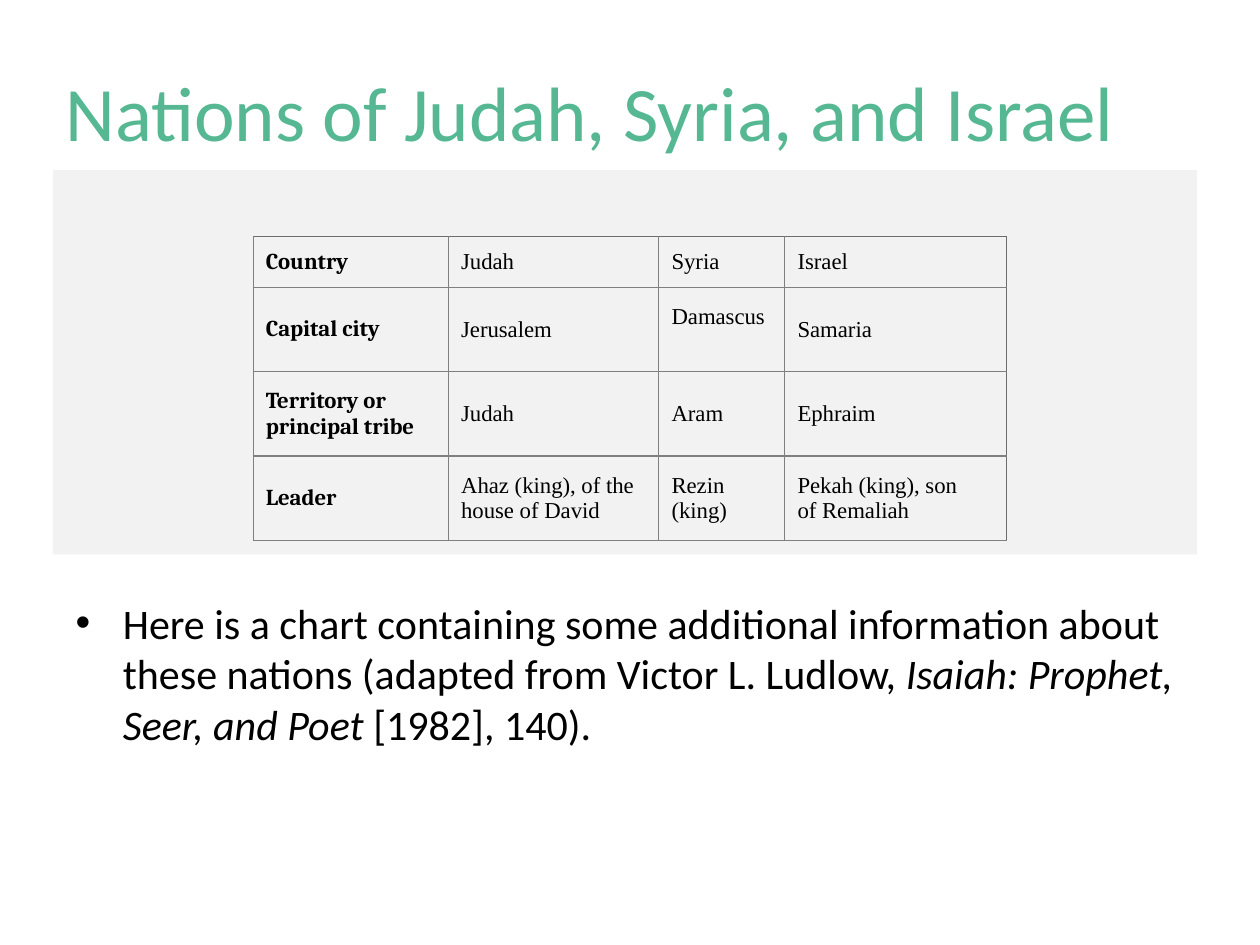
from lxml.etree import SubElement
from pptx import Presentation
from pptx.dml.color import RGBColor
from pptx.enum.shapes import MSO_SHAPE as Shape
from pptx.enum.text import MSO_ANCHOR as Anchor, MSO_AUTO_SIZE as AutoSize, PP_ALIGN as Align
from pptx.oxml.ns import qn
from pptx.util import Pt

GREEN = RGBColor(0x55, 0xB8, 0x93)
BLACK = RGBColor(0x00, 0x00, 0x00)
PANEL_GRAY = RGBColor(0xF2, 0xF2, 0xF2)
BORDER_GRAY = RGBColor(0x80, 0x80, 0x80)
EDGE_GRAY = RGBColor(0x6D, 0x6D, 0x6D)

HARD_SPACE = chr(160)
TITLE_FONT = {"name": "Calibri", "size": Pt(44)}
BODY_FONT = {"name": "Calibri", "size": Pt(24)}
HEADING_FONT = {"name": "Cambria", "size": Pt(13), "bold": True}
CELL_FONT = {"name": "Times New Roman", "size": Pt(13), "bold": False}

COLUMN_WIDTHS = [111.6, 120.24, 72, 126.72]
ROW_HEIGHTS = [28.8, 48.24, 48.24, 48.24]
NATIONS = [
    ["Country", "Judah", "Syria", "Israel"],
    ["Capital city", "Jerusalem", "Damascus", "Samaria"],
    ["Territory or principal tribe", "Judah", "Aram", "Ephraim"],
    ["Leader", "Ahaz (king), of the house of David", "Rezin\n(king)",
     f"Pekah{HARD_SPACE}(king), son of{HARD_SPACE}Remaliah"],
]
CITATION = [
    ("Here is a chart containing some additional information about these nations "
     f"(adapted from Victor L. Ludlow,{HARD_SPACE}", False),
    (f"Isaiah: Prophet, Seer, and Poet{HARD_SPACE}", True),
    ("[1982], 140).", False),
]


def format_font(font, values, color):
    for name, value in values.items():
        setattr(font, name, value)
    font.color.rgb = color


def place(shape, left, top, width, height):
    box = {"left": left, "top": top, "width": width, "height": height}
    for name, value in box.items():
        setattr(shape, name, Pt(value))


def add_panel(slide, left, top, width, height):
    panel = slide.shapes.add_shape(
        Shape.RECTANGLE, Pt(left), Pt(top), Pt(width), Pt(height))
    panel.shadow.inherit = False
    panel.fill.solid()
    panel.fill.fore_color.rgb = PANEL_GRAY
    panel.line.fill.background()
    # Send the panel behind the placeholders
    slide.shapes._spTree.insert(2, panel._element)


def fill_title(title, text):
    place(title, 30.24, 29.52, 653.76, 67.68)
    frame = title.text_frame
    frame.text = text
    frame.auto_size = AutoSize.NONE
    frame.vertical_anchor = Anchor.MIDDLE
    paragraph = frame.paragraphs[0]
    paragraph.alignment = Align.LEFT
    format_font(paragraph.runs[0].font, TITLE_FONT, GREEN)


def fill_body(body, runs):
    place(body, 36, 337.68, 648, 156.24)
    frame = body.text_frame
    frame.auto_size = AutoSize.NONE
    paragraph = frame.paragraphs[0]
    properties = paragraph._p.get_or_add_pPr()
    properties.set("marL", str(Pt(27)))
    properties.set("indent", str(Pt(-27)))
    SubElement(properties, qn("a:buChar"), char="•")
    paragraph.space_before = Pt(0)
    for text, italic in runs:
        run = paragraph.add_run()
        run.text = text
        format_font(run.font, {**BODY_FONT, "italic": italic}, BLACK)


def set_borders(cell, colors):
    properties = cell._tc.get_or_add_tcPr()
    for index, (side, color) in enumerate(colors.items()):
        line = properties.makeelement(qn(f"a:{side}"), {"w": str(Pt(0.75))})
        fill = SubElement(line, qn("a:solidFill"))
        SubElement(fill, qn("a:srgbClr"), val=str(color))
        properties.insert(index, line)


def fill_cell(cell, text, font_values):
    cell.fill.background()
    cell.vertical_anchor = Anchor.MIDDLE
    cell.text = text + 2 * HARD_SPACE
    for paragraph in cell.text_frame.paragraphs:
        for run in paragraph.runs:
            format_font(run.font, font_values, BLACK)


def add_nations_table(slide, left, top):
    table = slide.shapes.add_table(
        len(ROW_HEIGHTS), len(COLUMN_WIDTHS), Pt(left), Pt(top),
        Pt(sum(COLUMN_WIDTHS)), Pt(sum(ROW_HEIGHTS))).table
    table.first_row = table.horz_banding = False
    for column, width in zip(table.columns, COLUMN_WIDTHS):
        column.width = Pt(width)
    for row, height in zip(table.rows, ROW_HEIGHTS):
        row.height = Pt(height)
    last_column = len(COLUMN_WIDTHS) - 1
    for i, texts in enumerate(NATIONS):
        for j, text in enumerate(texts):
            cell = table.cell(i, j)
            fill_cell(cell, text, CELL_FONT if j else HEADING_FONT)
            set_borders(cell, {
                "lnL": BORDER_GRAY,
                "lnR": EDGE_GRAY if j == last_column else BORDER_GRAY,
                "lnT": BORDER_GRAY if i else EDGE_GRAY,
                "lnB": BORDER_GRAY,
            })


def main():
    presentation = Presentation()
    presentation.slide_width, presentation.slide_height = Pt(720), Pt(540)
    slide = presentation.slides.add_slide(presentation.slide_layouts[1])

    # Title, citation and the table on its panel
    add_panel(slide, 30.24, 97.2, 653.76, 219.6)
    fill_title(slide.shapes.title, "Nations of Judah, Syria, and Israel")
    fill_body(slide.placeholders[1], CITATION)
    add_nations_table(slide, 144.72, 135.36)

    presentation.save("out.pptx")


if __name__ == "__main__":
    main()
